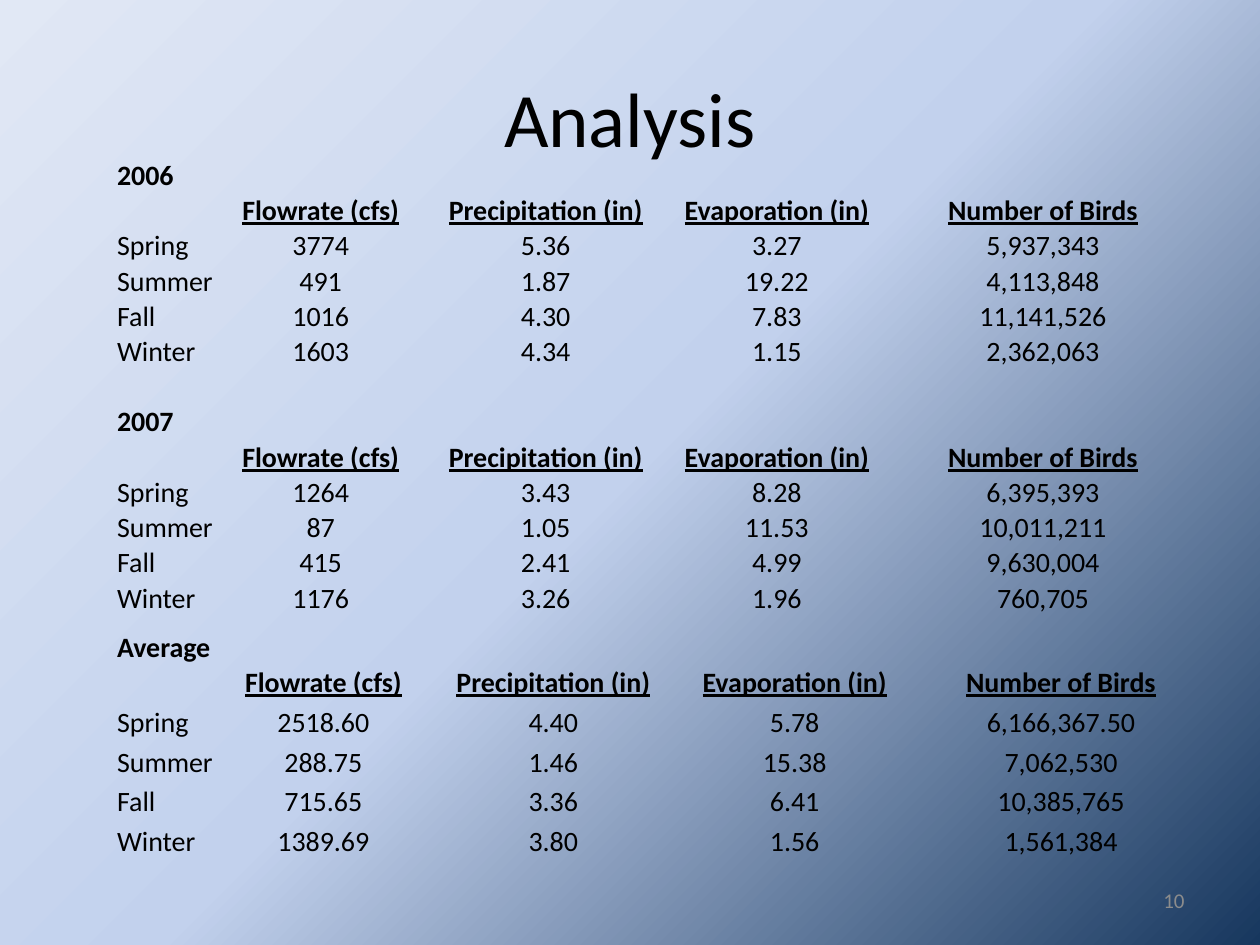
from lxml import etree
from pptx import Presentation
from pptx.dml.color import RGBColor
from pptx.enum.text import MSO_ANCHOR, PP_ALIGN
from pptx.oxml.ns import qn
from pptx.util import Cm, Pt

LEFT, CENTER, RIGHT = PP_ALIGN.LEFT, PP_ALIGN.CENTER, PP_ALIGN.RIGHT
MIDDLE, BOTTOM = MSO_ANCHOR.MIDDLE, MSO_ANCHOR.BOTTOM
COLORS = {"text": "000000", "number": "8C8C8C",
          "dark": "17375E", "mid": "C2D1ED", "light": "E1E8F5"}
NO_GRID_STYLE = "{2D5ABB26-0587-4C30-8999-92F81FD0307C}"


def write(tf, text, size=16, color="text", align=LEFT, bold=False, underline=False):
    p = tf.paragraphs[0]
    p.alignment = align
    if not text:
        # An empty cell keeps the row height of its text size
        etree.SubElement(p._p, qn("a:endParaRPr"), sz=str(size * 100))
        return
    r = p.add_run()
    r.text = text
    r.font.name = "Calibri"
    r.font.size = Pt(size)
    r.font.bold = bold
    r.font.underline = underline
    r.font.color.rgb = RGBColor.from_string(COLORS[color])


prs = Presentation()
prs.slide_width, prs.slide_height = Cm(25.4), Cm(19.05)
s = prs.slides.add_slide(prs.slide_layouts[6])

# Background: gradient spreading from the bottom right corner
fill = s.background.fill
fill.gradient()
grad = s.background._cSld.find(".//" + qn("a:gradFill"))
for child in list(grad):
    grad.remove(child)
stops = etree.SubElement(grad, qn("a:gsLst"))
for pos, name in ((0, "dark"), (50, "mid"), (100, "light")):
    stop = etree.SubElement(stops, qn("a:gs"), pos=str(pos * 1000))
    etree.SubElement(stop, qn("a:srgbClr"), val=COLORS[name])
path = etree.SubElement(grad, qn("a:path"), path="circle")
etree.SubElement(path, qn("a:fillToRect"), l="100000", t="100000")

# Title and slide number
for text, box, fmt in (
    ("Analysis", (1.27, 0.76, 22.86, 3.18), {"size": 44, "align": CENTER}),
    ("10", (18.2, 17.65, 5.93, 1.01), {"size": 12, "align": RIGHT, "color": "number"}),
):
    tf = s.shapes.add_textbox(*[Cm(v) for v in box]).text_frame
    tf.word_wrap = True
    tf.vertical_anchor = MIDDLE
    write(tf, text, **fmt)

# Table content: the fifth column is a spacer
HEADER = ["", "Flowrate (cfs)", "Precipitation (in)", "Evaporation (in)", "", "Number of Birds"]
YEARS = [
    ["2006"],
    HEADER,
    ["Spring", "3774", "5.36", "3.27", "", "5,937,343"],
    ["Summer", "491", "1.87", "19.22", "", "4,113,848"],
    ["Fall", "1016", "4.30", "7.83", "", "11,141,526"],
    ["Winter", "1603", "4.34", "1.15", "", "2,362,063"],
    [],
    ["2007"],
    HEADER,
    ["Spring", "1264", "3.43", "8.28", "", "6,395,393"],
    ["Summer", "87", "1.05", "11.53", "", "10,011,211"],
    ["Fall", "415", "2.41", "4.99", "", "9,630,004"],
    ["Winter", "1176", "3.26", "1.96", "", "760,705"],
]
AVERAGE = [
    ["Average"],
    HEADER,
    ["Spring", "2518.60", "4.40", "5.78", "", "6,166,367.50"],
    ["Summer", "288.75", "1.46", "15.38", "", "7,062,530"],
    ["Fall", "715.65", "3.36", "6.41", "", "10,385,765"],
    ["Winter", "1389.69", "3.80", "1.56", "", "1,561,384"],
]

# Tables: rows, top, column widths, height of the data rows
for rows, top, widths, data_height in (
    (YEARS, 3.18, (2.13, 3.99, 5.08, 4.24, 1.19, 4.11), 0.71),
    (AVERAGE, 12.7, (2.01, 4.34, 4.93, 4.8, 0.43, 5.08), 0.8),
):
    heights = [data_height if len(row) > 1 and row[0] else 0.71 for row in rows]
    frame = s.shapes.add_table(len(rows), len(widths), Cm(2.34), Cm(top),
                               Cm(sum(widths)), Cm(sum(heights)))
    table = frame.table
    table.first_row = table.horz_banding = False
    table._tbl.tblPr.find(qn("a:tableStyleId")).text = NO_GRID_STYLE
    for column, width in zip(table.columns, widths):
        column.width = Cm(width)
    for i, row in enumerate(rows):
        table.rows[i].height = Cm(heights[i])
        for j in range(len(widths)):
            cell = table.cell(i, j)
            cell.fill.background()
            cell.vertical_anchor = BOTTOM
            cell.margin_left = cell.margin_right = cell.margin_top = Cm(0.02)
            cell.margin_bottom = 0
            write(cell.text_frame, row[j] if j < len(row) else "",
                  align=CENTER if j else LEFT,
                  bold=row is HEADER or len(row) == 1, underline=row is HEADER)

prs.save("out.pptx")
